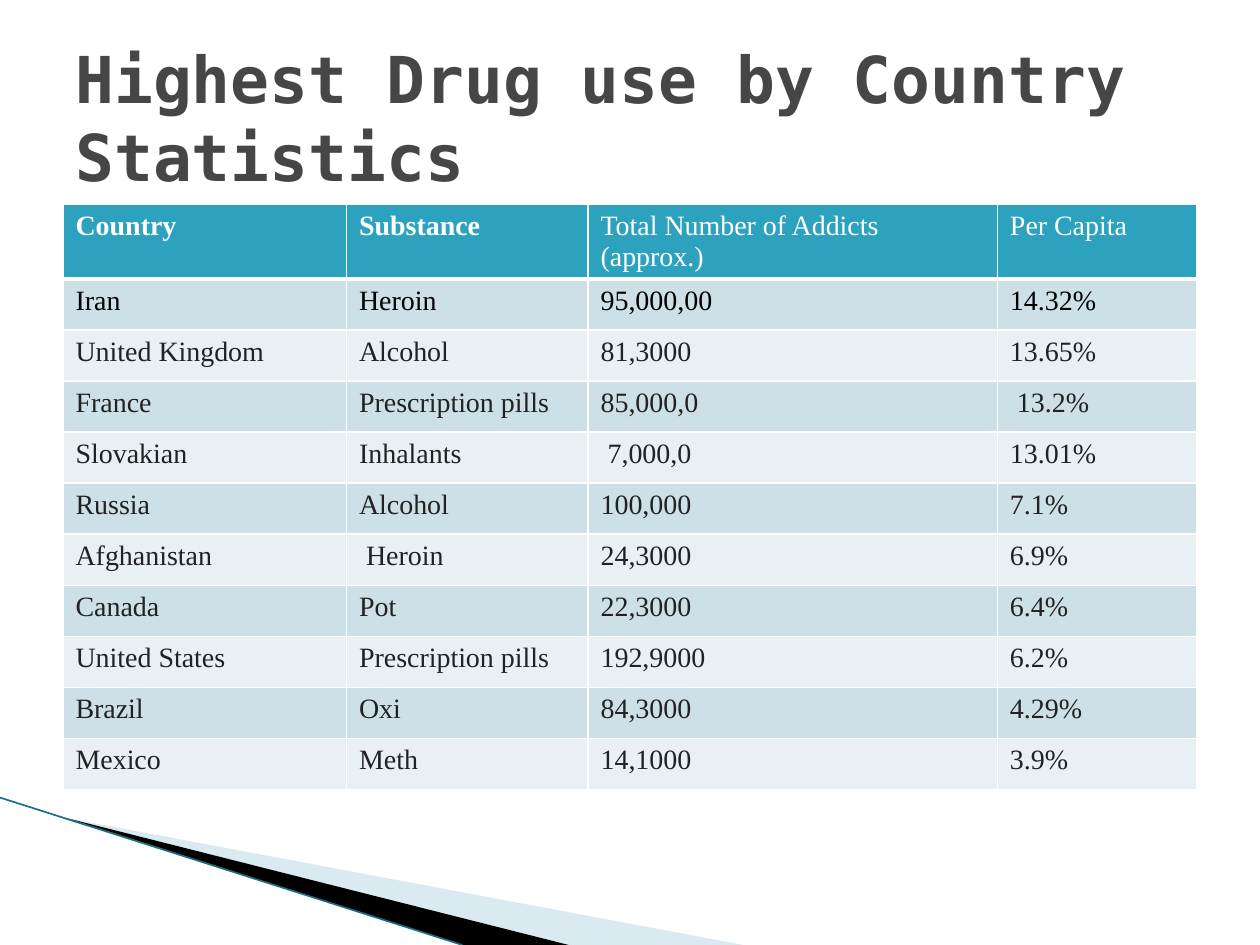
from lxml import etree
from pptx import Presentation
from pptx.dml.color import RGBColor
from pptx.enum.shapes import MSO_CONNECTOR
from pptx.enum.text import MSO_ANCHOR
from pptx.oxml.ns import qn
from pptx.util import Inches, Pt

STRAIGHT = MSO_CONNECTOR.STRAIGHT
MIDDLE = MSO_ANCHOR.MIDDLE
WIDTH, HEIGHT = 10, 7.5
MARGIN = WIDTH / 20
CONTENT_WIDTH = WIDTH - 2 * MARGIN
COLUMN_SHARES = (0.25, 0.213, 0.361, 0.176)
BAND_COLORS = ("E8F0F4", "CDE0E8")
ROWS = (
    ("Country", "Substance", "Total Number of Addicts (approx.)", "Per Capita"),
    ("Iran", "Heroin", "95,000,00", "14.32%"),
    ("United Kingdom", "Alcohol", "81,3000", "13.65%"),
    ("France", "Prescription pills", "85,000,0", " 13.2%"),
    ("Slovakian", "Inhalants", " 7,000,0", "13.01%"),
    ("Russia", "Alcohol", "100,000", "7.1%"),
    ("Afghanistan", " Heroin", "24,3000", "6.9%"),
    ("Canada", "Pot", "22,3000", "6.4%"),
    ("United States", "Prescription pills", "192,9000", "6.2%"),
    ("Brazil", "Oxi", "84,3000", "4.29%"),
    ("Mexico", "Meth", "14,1000", "3.9%"),
)


def color(value):
    """Return the colour for a hex string."""
    return RGBColor.from_string(value)


def style_font(font, name, size, value, bold):
    """Set the face, size, colour and weight of a font."""
    font.name, font.size, font.bold = name, Pt(size), bold
    font.color.rgb = color(value)


def add_wedge(slide, points, value, opacity=100):
    """Draw a filled outline through points given in inches."""
    start, *others = [(Inches(x), Inches(y)) for x, y in points]
    builder = slide.shapes.build_freeform(*start)
    builder.add_line_segments(others, close=True)
    shape = builder.convert_to_shape()
    shape.shadow.inherit = False
    shape.fill.solid()
    shape.fill.fore_color.rgb = color(value)
    shape.line.fill.background()
    if opacity < 100:
        fill = shape._element.spPr.find(qn("a:solidFill"))
        etree.SubElement(fill[0], qn("a:alpha"), val=str(opacity * 1000))


def add_corner(slide, left, top, width, height):
    """Place the two wedges and the edge line in the lower left corner."""
    right, bottom = left + width, top + height
    tip = (left + 0.09 * width, top + 0.14 * height)
    middle = (left + 0.765 * width, bottom)
    edge = (left + 0.622 * width, bottom)
    add_wedge(slide, (tip, (right, bottom), middle), "A0CBDC", 40)
    add_wedge(slide, (tip, middle, edge), "000000")
    line = slide.shapes.add_connector(
        STRAIGHT, Inches(left), Inches(top), Inches(edge[0]), Inches(bottom))
    line.line.color.rgb = color("1A6F85")
    line.line.width = Pt(0.95)
    etree.SubElement(line._element.spPr, qn("a:effectLst"))


def set_borders(cell, bottom_width):
    """Give a cell white borders with the given bottom width in points."""
    properties = cell._tc.get_or_add_tcPr()
    widths = {"a:lnL": 1, "a:lnR": 1, "a:lnT": 1, "a:lnB": bottom_width}
    for index, (tag, width) in enumerate(widths.items()):
        border = etree.Element(qn(tag), w=str(Pt(width)))
        fill = etree.SubElement(border, qn("a:solidFill"))
        etree.SubElement(fill, qn("a:srgbClr"), val="FFFFFF")
        properties.insert(index, border)


def add_statistics(slide, left, top, width, height):
    """Place the table of countries in the given box."""
    table = slide.shapes.add_table(
        len(ROWS), len(COLUMN_SHARES),
        Inches(left), Inches(top), Inches(width), Inches(height)).table
    for column, share in zip(table.columns, COLUMN_SHARES):
        column.width = Inches(share * width)
    for row_index, row in enumerate(ROWS):
        header = row_index == 0
        fill_color = "2DA2BF" if header else BAND_COLORS[row_index % 2]
        text_color = {0: "FFFFFF", 1: "000000"}.get(row_index, "222222")
        for column_index, text in enumerate(row):
            cell = table.cell(row_index, column_index)
            cell.text = text
            cell.fill.solid()
            cell.fill.fore_color.rgb = color(fill_color)
            style_font(cell.text_frame.paragraphs[0].font, "Times New Roman",
                       16, text_color, header and column_index < 2)
            set_borders(cell, 3 if header else 1)


def add_title(slide, left, top, width, height):
    """Place the slide title in the given box."""
    box = slide.shapes.add_textbox(
        Inches(left), Inches(top), Inches(width), Inches(height))
    frame = box.text_frame
    frame.word_wrap = True
    frame.vertical_anchor = MIDDLE
    paragraph = frame.paragraphs[0]
    paragraph.text = "Highest Drug use by Country Statistics"
    style_font(paragraph.font, "DejaVu Sans Mono", 36.9, "464646", True)


def main():
    """Build and save the slide."""
    presentation = Presentation()
    presentation.slide_width = Inches(WIDTH)
    presentation.slide_height = Inches(HEIGHT)
    slide = presentation.slides.add_slide(presentation.slide_layouts[6])
    corner_top = 6.33
    add_corner(slide, 0, corner_top, 5.9, HEIGHT - corner_top)
    add_statistics(slide, MARGIN, 1.62, CONTENT_WIDTH, 4.46)
    add_title(slide, MARGIN, HEIGHT / 25, CONTENT_WIDTH, HEIGHT / 6)
    presentation.save("out.pptx")


if __name__ == "__main__":
    main()
